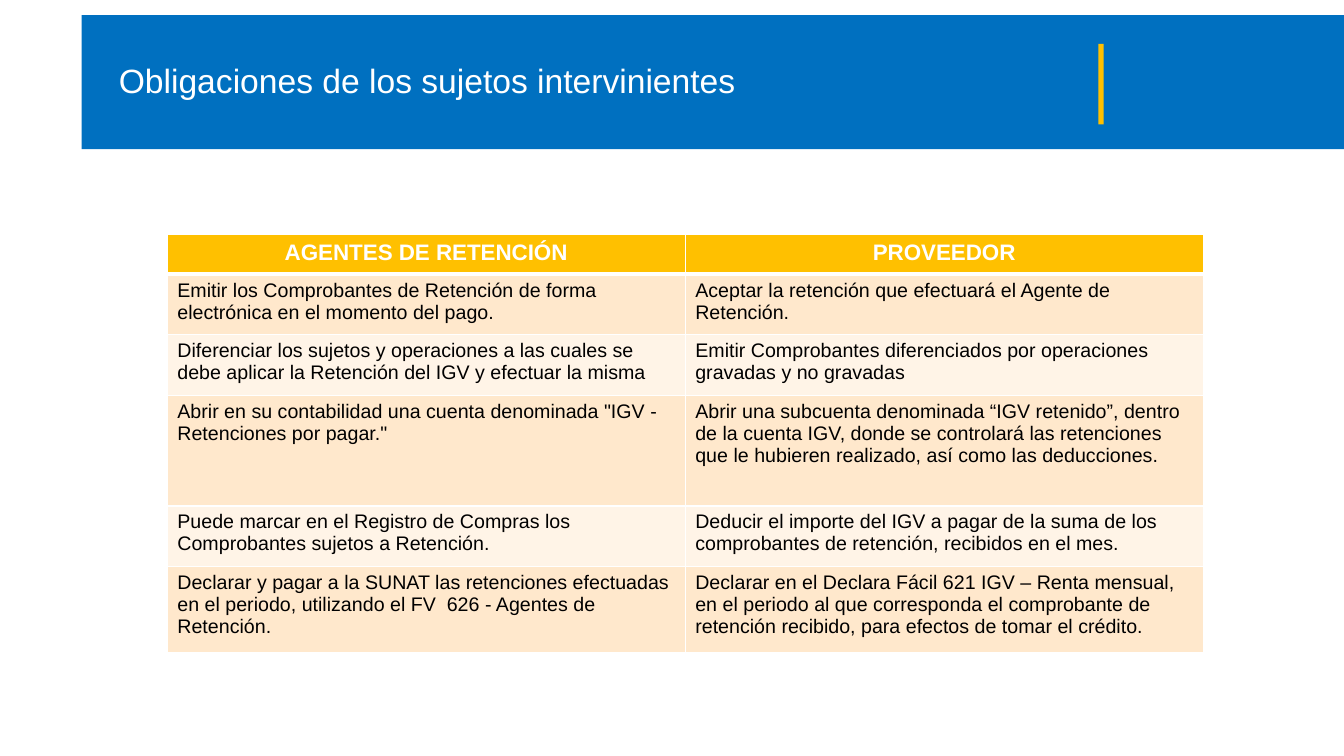
from dataclasses import dataclass

import pptx
import pptx.dml.color
import pptx.enum.shapes
import pptx.enum.text
import pptx.oxml
import pptx.oxml.ns
import pptx.util

COLORS = {
    "blue": "0070C0",
    "amber": "FFC000",
    "white": "FFFFFF",
    "black": "000000",
    "odd": "FFE8CC",
    "even": "FFF4E7",
}
FONT = "Arial"
SLIDE_WIDTH = pptx.util.Inches(13.33)
SLIDE_HEIGHT = pptx.util.Inches(7.5)


@dataclass(frozen=True)
class Area:
    """Percentages of the slide's width and height."""
    left: float
    top: float
    width: float
    height: float

    def box(self) -> tuple[int, int, int, int]:
        return across(self.left), down(self.top), across(self.width), down(self.height)


@dataclass(frozen=True)
class Band:
    area: Area
    color: str


@dataclass(frozen=True)
class Duty:
    agent: str
    supplier: str
    height: float


@dataclass(frozen=True)
class CellStyle:
    fill: str
    color: str
    size: int
    bold: bool
    align: pptx.enum.text.PP_ALIGN
    top: int
    bottom: int


BANDS = [
    Band(Area(6.08, 2, 93.92, 17.73), "blue"),
    Band(Area(81.73, 5.8, 0.38, 10.67), "amber"),
]
TITLE = Area(8.1, 7.2, 47.86, 6.67)
TABLE = Area(12.45, 31.07, 77.08, 55.2)
DUTIES = [
    Duty("AGENTES DE RETENCIÓN", "PROVEEDOR", 5.2),
    Duty("Emitir los Comprobantes de Retención de forma electrónica en el momento del pago.",
         "Aceptar la retención que efectuará el Agente de Retención.", 8),
    Duty("Diferenciar los sujetos y operaciones a las cuales se debe aplicar la Retención "
         "del IGV y efectuar la misma",
         "Emitir Comprobantes diferenciados por operaciones gravadas y no gravadas", 8),
    Duty('Abrir en su contabilidad una cuenta denominada "IGV - Retenciones por pagar."',
         "Abrir una subcuenta denominada “IGV retenido”, dentro de la cuenta IGV, donde se "
         "controlará las retenciones que le hubieren realizado, así como las deducciones.", 14.67),
    Duty("Puede marcar en el Registro de Compras los Comprobantes sujetos a Retención.",
         "Deducir el importe del IGV a pagar de la suma de los comprobantes de retención, "
         "recibidos en el mes.", 8),
    Duty("Declarar y pagar a la SUNAT las retenciones efectuadas en el periodo, utilizando "
         "el FV  626 - Agentes de Retención.",
         "Declarar en el Declara Fácil 621 IGV – Renta mensual, en el periodo al que "
         "corresponda el comprobante de retención recibido, para efectos de tomar el crédito.",
         11.33),
]


def across(percent: float) -> int:
    return round(SLIDE_WIDTH * percent / 100)


def down(percent: float) -> int:
    return round(SLIDE_HEIGHT * percent / 100)


def rgb(name: str) -> pptx.dml.color.RGBColor:
    return pptx.dml.color.RGBColor.from_string(COLORS[name])


def set_font(paragraph, size: int, color: str, bold: bool = False) -> None:
    font = paragraph.font
    font.name, font.size, font.bold = FONT, pptx.util.Pt(size), bold
    font.color.rgb = rgb(color)


def draw_band(slide, band: Band) -> None:
    strip = slide.shapes.add_shape(
        pptx.enum.shapes.MSO_SHAPE.RECTANGLE, *band.area.box())
    strip.shadow.inherit = False
    strip.fill.solid()
    strip.fill.fore_color.rgb = rgb(band.color)
    strip.line.fill.background()


def draw_title(slide, text: str) -> None:
    frame = slide.shapes.add_textbox(*TITLE.box()).text_frame
    frame.word_wrap = False
    frame.auto_size = pptx.enum.text.MSO_AUTO_SIZE.SHAPE_TO_FIT_TEXT
    frame.text = text
    set_font(frame.paragraphs[0], 24, "white")


def set_borders(cell, style: CellStyle) -> None:
    properties = cell._tc.get_or_add_tcPr()
    for side, points in zip("LRTB", (1, 1, style.top, style.bottom)):
        properties.append(pptx.oxml.parse_xml(
            f'<a:ln{side} {pptx.oxml.ns.nsdecls("a")} w="{pptx.util.Pt(points)}">'
            f'<a:solidFill><a:srgbClr val="{COLORS["white"]}"/></a:solidFill></a:ln{side}>'))


def row_style(index: int) -> CellStyle:
    align = pptx.enum.text.PP_ALIGN
    if index == 0:
        return CellStyle("amber", "white", 16, True, align.CENTER, 1, 3)
    fill = "odd" if index % 2 else "even"
    return CellStyle(fill, "black", 14, False, align.LEFT, 3 if index == 1 else 1, 1)


def fill_cell(cell, text: str, style: CellStyle) -> None:
    set_borders(cell, style)
    cell.fill.solid()
    cell.fill.fore_color.rgb = rgb(style.fill)
    cell.text = text
    paragraph = cell.text_frame.paragraphs[0]
    paragraph.alignment = style.align
    set_font(paragraph, style.size, style.color, style.bold)


def draw_duties(slide) -> None:
    table = slide.shapes.add_table(len(DUTIES), 2, *TABLE.box()).table
    for column in table.columns:
        column.width = across(TABLE.width / 2)
    for index, duty in enumerate(DUTIES):
        table.rows[index].height = down(duty.height)
        for column, text in enumerate((duty.agent, duty.supplier)):
            fill_cell(table.cell(index, column), text, row_style(index))


def main() -> None:
    deck = pptx.Presentation()
    deck.slide_width, deck.slide_height = SLIDE_WIDTH, SLIDE_HEIGHT
    slide = deck.slides.add_slide(deck.slide_layouts[6])
    for band in BANDS:
        draw_band(slide, band)
    draw_title(slide, "Obligaciones de los sujetos intervinientes")
    draw_duties(slide)
    deck.save("out.pptx")


if __name__ == "__main__":
    main()
